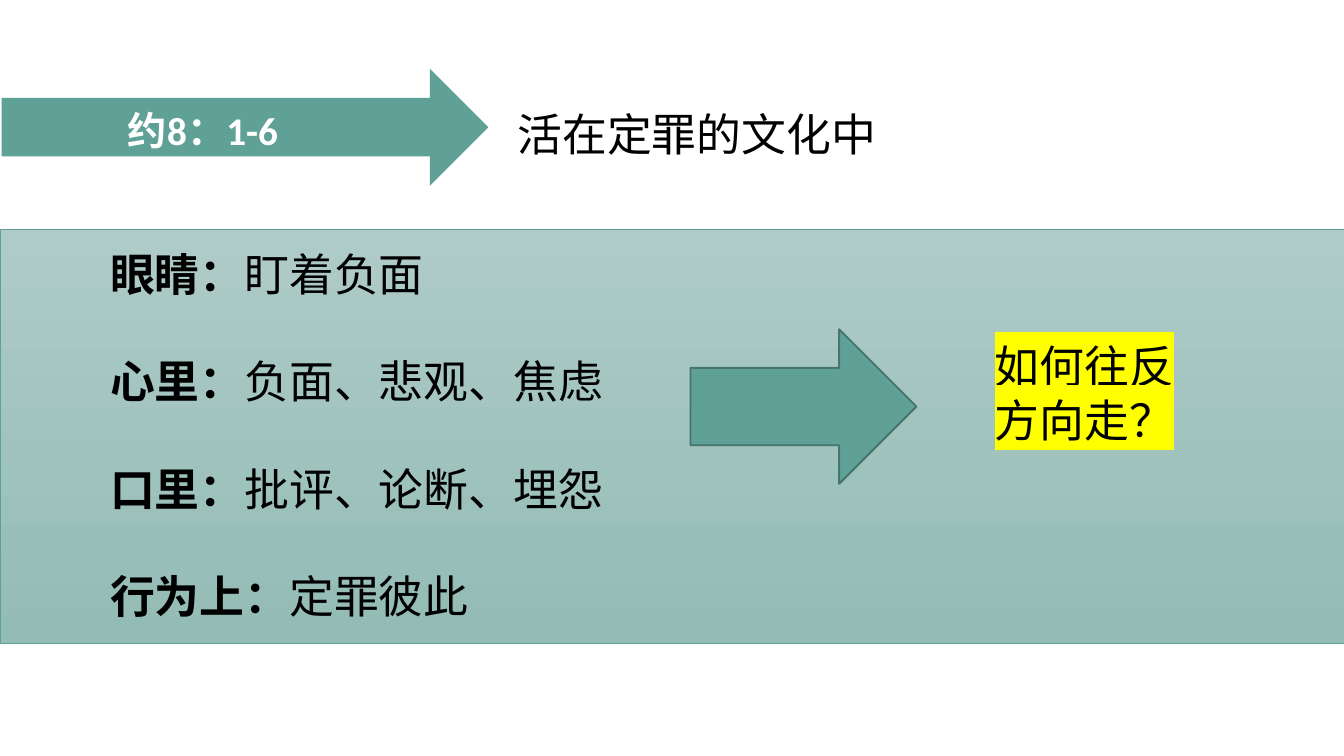
import lxml.etree
import pptx
import pptx.dml.color
import pptx.enum.shapes
import pptx.enum.text
import pptx.oxml.ns
import pptx.util

Cm = pptx.util.Cm
Pt = pptx.util.Pt
RGBColor = pptx.dml.color.RGBColor
Align = pptx.enum.text.PP_ALIGN
Preset = pptx.enum.shapes.MSO_SHAPE
qn = pptx.oxml.ns.qn

TEAL = RGBColor(0x60, 0xA1, 0x97)
DARK_TEAL = RGBColor(0x46, 0x75, 0x6E)
PALE_TEAL = RGBColor(0xAF, 0xCB, 0xC7)
SOFT_TEAL = RGBColor(0x93, 0xBC, 0xB5)
BLACK = RGBColor(0, 0, 0)
WHITE = RGBColor(0xFF, 0xFF, 0xFF)
YELLOW = RGBColor(0xFF, 0xFF, 0)

CJK_FONT = "Noto Sans CJK SC"
LINE_FACTOR = 1.2
FRAME_FORMAT = {
    "margin_left": Cm(0.18),
    "margin_right": Cm(0.18),
    "margin_top": Cm(0.18),
    "margin_bottom": Cm(0.1),
    "word_wrap": True,
    "auto_size": pptx.enum.text.MSO_AUTO_SIZE.NONE,
    "vertical_anchor": pptx.enum.text.MSO_ANCHOR.TOP,
}


def apply(target, formats):
    for attribute, value in formats.items():
        setattr(target, attribute, value)


class SlideBuilder:
    def __init__(self, slide):
        self.slide = slide

    def preset(self, kind, box, fill, line=None, width=1):
        shape = self.slide.shapes.add_shape(kind, *map(Cm, box))
        shape.shadow.inherit = False
        if isinstance(fill, list):
            shape.fill.gradient()
            shape.fill.gradient_angle = 270
            for stop, color in zip(shape.fill.gradient_stops, fill):
                stop.color.rgb = color
        else:
            shape.fill.solid()
            shape.fill.fore_color.rgb = fill
        if line is None:
            shape.line.fill.background()
        else:
            shape.line.color.rgb = line
            shape.line.width = Pt(width)

    def text(self, box, lines, holder=None, size=24, font=CJK_FONT, color=BLACK,
             align=Align.LEFT, gap=0, highlight=None):
        if holder is None:
            holder = self.slide.shapes.add_textbox(*map(Cm, box))
        else:
            self.slide.shapes.element.append(holder.element)
            apply(holder, dict(zip(("left", "top", "width", "height"), map(Cm, box))))
        frame = holder.text_frame
        apply(frame, FRAME_FORMAT)
        for index, runs in enumerate(lines):
            paragraph = frame.add_paragraph() if index else frame.paragraphs[0]
            apply(paragraph, {
                "alignment": align,
                "line_spacing": Pt(size * LINE_FACTOR),
                "space_before": Pt(0),
                "space_after": Pt(gap),
            })
            properties = paragraph._p.get_or_add_pPr()
            properties.set("marL", "0")
            properties.set("indent", "0")
            lxml.etree.SubElement(properties, qn("a:buNone"))
            for wording, bold in runs:
                run = paragraph.add_run()
                run.text = wording
                apply(run.font, {"name": font, "size": Pt(size), "bold": bold})
                run.font.color.rgb = color
                self.finish_run(run, highlight)

    def finish_run(self, run, highlight):
        latin = run._r.rPr.find(qn("a:latin"))
        east_asian = latin.makeelement(qn("a:ea"), {"typeface": CJK_FONT})
        latin.addnext(east_asian)
        if highlight is not None:
            marker = latin.makeelement(qn("a:highlight"), {})
            lxml.etree.SubElement(marker, qn("a:srgbClr"), val=str(highlight))
            latin.addprevious(marker)


def main():
    deck = pptx.Presentation()
    deck.slide_width, deck.slide_height = Cm(25.4), Cm(14.28)
    slide = deck.slides.add_slide(deck.slide_layouts[1])
    title, body = slide.placeholders
    builder = SlideBuilder(slide)

    builder.preset(Preset.RIGHT_ARROW, (0.03, 1.3, 9.2, 2.21), TEAL)
    builder.text((2.24, 1.83, 3.94, 1.09), [[("约8：1-6", True)]],
                 size=21, font="Calibri", color=WHITE)
    builder.text((9.6, 1.83, 11.2, 1.22), [[("活在定罪的文化中", False)]],
                 holder=title, align=Align.JUSTIFY)

    builder.preset(Preset.RECTANGLE, (0, 4.34, 25.45, 7.82),
                   [PALE_TEAL, SOFT_TEAL], TEAL, 0.75)
    habits = {
        "眼睛：": "盯着负面",
        "心里：": "负面、悲观、焦虑",
        "口里：": "批评、论断、埋怨",
        "行为上：": "定罪彼此",
    }
    builder.text((1.9, 4.47, 11.63, 7.37),
                 [[(part, True), (habit, False)] for part, habit in habits.items()],
                 holder=body, gap=24 * LINE_FACTOR)

    builder.preset(Preset.RIGHT_ARROW, (13.05, 6.22, 4.27, 2.92), TEAL, DARK_TEAL)
    builder.text((18.62, 6.22, 5.66, 2.24),
                 [[("如何往反", False)], [("方向走？", False)]], highlight=YELLOW)

    deck.save("out.pptx")


if __name__ == "__main__":
    main()
